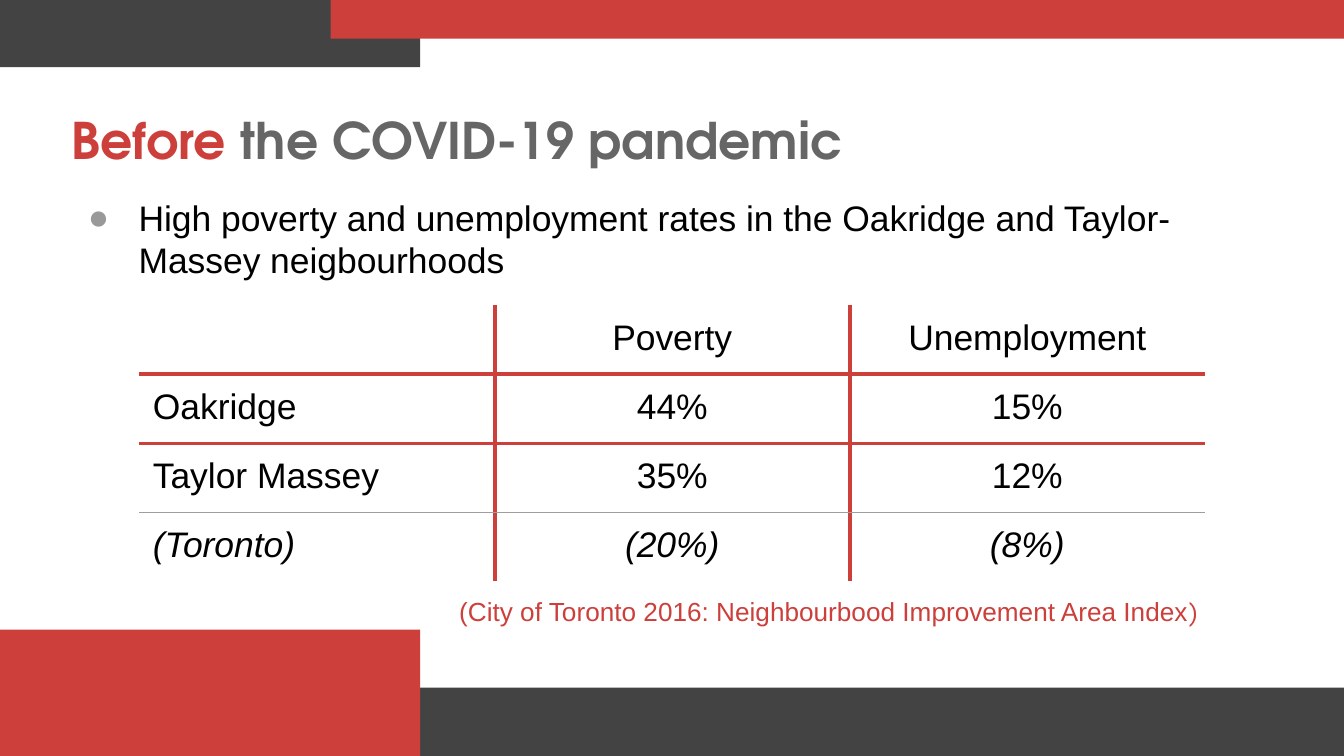
from lxml.etree import SubElement
from pptx import Presentation
from pptx.dml.color import RGBColor
from pptx.enum.shapes import MSO_SHAPE
from pptx.enum.text import MSO_ANCHOR, PP_ALIGN
from pptx.oxml.ns import qn
from pptx.util import Cm, Pt

HUES = {"red": "CC3F3A", "dark": "434343", "gray": "666666", "dot": "999999",
        "rule": "9E9E9E", "black": "000000", "white": "FFFFFF"}
HEAD = "TeX Gyre Adventor"
BODY = "Arial"

BANDS = [
    ("dark", 6.25, 13, 19.15, 1.29),
    ("red", 0, 11.9, 7.94, 2.39),
    ("dark", 0, 0, 7.94, 1.27),
    ("red", 6.25, 0, 19.15, 0.73),
]
TITLE = [("Before ", HEAD, 27, "red", True),
         ("the COVID-19 pandemic", HEAD, 27, "gray", True)]
POINT = [("High poverty and unemployment rates in the Oakridge and "
          "Taylor-Massey neigbourhoods", BODY, 19, "black", False)]
CREDIT = [("(City of Toronto 2016: Neighbourbood Improvement Area Index",
           BODY, 14, "red", False),
          (")", HEAD, 14, "red", False)]
RATES = [
    ["", "Poverty", "Unemployment"],
    ["Oakridge", "44%", "15%"],
    ["Taylor Massey", "35%", "12%"],
    ["(Toronto)", "(20%)", "(8%)"],
]
EDGE = ("white", 0.75)
BOLD = ("red", 2.25)
THIN = ("rule", 0.75)
ACROSS = [EDGE, BOLD, BOLD, THIN, EDGE]
DOWN = [EDGE, BOLD, BOLD, EDGE]
GRID = {"left": 2.64, "top": 5.77, "col": 6.71, "row": 1.255}
PAD = {"margin_left": Cm(0.25), "margin_right": Cm(0.25),
       "margin_top": Cm(0.25), "margin_bottom": Cm(0.25)}


def color(name):
    return RGBColor.from_string(HUES[name])


def apply(item, values):
    for name, value in values.items():
        setattr(item, name, value)


def write(para, runs, **extra):
    for text, face, size, hue, bold in runs:
        run = para.add_run()
        run.text = text
        apply(run.font, {"name": face, "size": Pt(size), "bold": bold, **extra})
        run.font.color.rgb = color(hue)


def add_text(slide, place, runs, anchor=MSO_ANCHOR.TOP):
    frame = slide.shapes.add_textbox(*map(Cm, place)).text_frame
    apply(frame, {**PAD, "word_wrap": True, "vertical_anchor": anchor})
    para = frame.paragraphs[0]
    write(para, runs)
    return para


def add_bullet(para):
    props = para._p.get_or_add_pPr()
    apply(para, {"space_after": Pt(10)})
    props.set("marL", str(Cm(1.27)))
    props.set("indent", str(Cm(-0.96)))
    tint = SubElement(props, qn("a:buClr"))
    SubElement(tint, qn("a:srgbClr"), val=HUES["dot"])
    SubElement(props, qn("a:buFont"), typeface=BODY)
    SubElement(props, qn("a:buChar"), char="●")


def add_border(cell, side, hue, width):
    line = SubElement(cell._tc.get_or_add_tcPr(), qn("a:" + side), w=str(Pt(width)))
    fill = SubElement(line, qn("a:solidFill"))
    SubElement(fill, qn("a:srgbClr"), val=HUES[hue])


def add_rates(slide):
    rows, cols = len(RATES), len(RATES[0])
    place = (GRID["left"], GRID["top"], GRID["col"] * cols, GRID["row"] * rows)
    table = slide.shapes.add_table(rows, cols, *map(Cm, place)).table
    apply(table, {"first_row": False, "horz_banding": False})
    for row in table.rows:
        row.height = Cm(GRID["row"])
    for r, line in enumerate(RATES):
        for c, text in enumerate(line):
            cell = table.cell(r, c)
            apply(cell, PAD)
            sides = {"lnL": DOWN[c], "lnR": DOWN[c + 1],
                     "lnT": ACROSS[r], "lnB": ACROSS[r + 1]}
            for side, style in sides.items():
                add_border(cell, side, *style)
            cell.fill.background()
            para = cell.text_frame.paragraphs[0]
            para.alignment = PP_ALIGN.CENTER if c else PP_ALIGN.LEFT
            if text:
                write(para, [(text, BODY, 19, "black", False)],
                      italic=r == rows - 1)


def main():
    deck = Presentation()
    apply(deck, {"slide_width": Cm(25.4), "slide_height": Cm(14.29)})
    slide = deck.slides.add_slide(deck.slide_layouts[6])
    for hue, *place in BANDS:
        band = slide.shapes.add_shape(MSO_SHAPE.RECTANGLE, *map(Cm, place))
        band.shadow.inherit = False
        band.fill.solid()
        band.fill.fore_color.rgb = color(hue)
        band.line.fill.background()
    add_text(slide, (1.1, 1.85, 23.67, 1.6), TITLE, MSO_ANCHOR.BOTTOM)
    add_bullet(add_text(slide, (1.1, 3.45, 22.3, 2.26), POINT))
    add_rates(slide)
    add_text(slide, (8.43, 11, 14.63, 1.14), CREDIT)
    deck.save("out.pptx")


if __name__ == "__main__":
    main()
